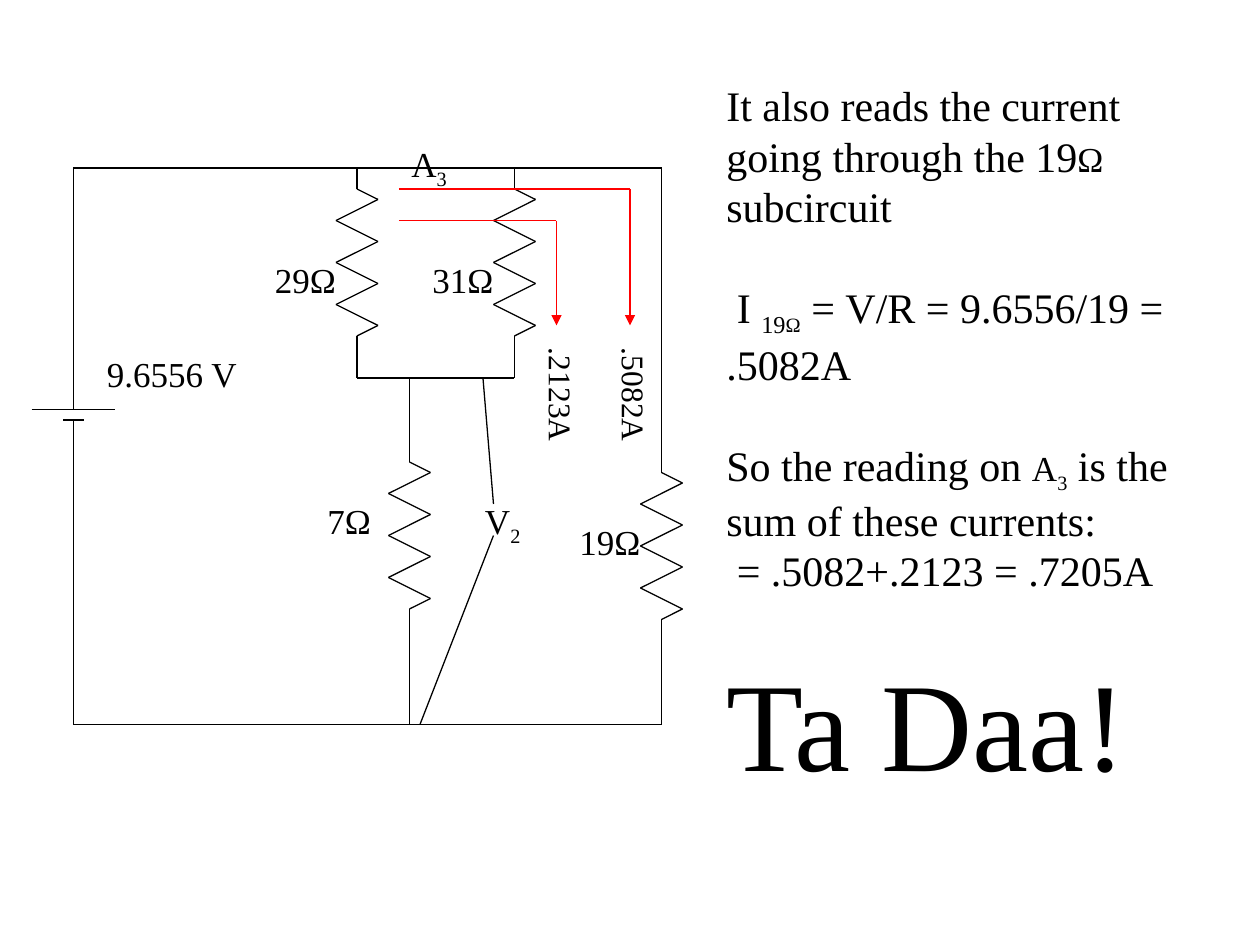
from itertools import pairwise

from lxml.etree import SubElement
from pptx import Presentation
from pptx.dml.color import RGBColor
from pptx.enum.shapes import MSO_CONNECTOR
from pptx.enum.text import MSO_AUTO_SIZE, PP_ALIGN
from pptx.oxml.ns import qn
from pptx.util import Cm, Pt

BLACK = RGBColor(0, 0, 0)
RED = RGBColor(255, 0, 0)
FONT = "Times New Roman"
GRID = 2.54 / 12  # the circuit lies on a grid of twelve steps to the inch


def grid(n):
    return Cm(n * GRID)


class CircuitSlide:
    def __init__(self, prs):
        self.s = prs.slides.add_slide(prs.slide_layouts[6])

    def wire(self, *points, color=BLACK, arrow=False):
        """Join the points by straight lines, with an arrowhead on the last if asked."""
        for start, end in pairwise(points):
            line = self.s.shapes.add_connector(
                MSO_CONNECTOR.STRAIGHT, *map(grid, start + end))
            line.line.color.rgb = color
            line.line.width = Pt(0.75)
            SubElement(line._element.spPr, qn("a:effectLst"))
        if arrow:
            SubElement(line.line._get_or_add_ln(), qn("a:tailEnd"), type="triangle")

    def resistor(self, x, top):
        """Zigzag, 14 steps high, centred on x."""
        turns = [(x + (-2 if i % 2 else 2), top + 1 + 2 * i) for i in range(7)]
        self.wire((x, top), *turns, (x, top + 14))

    def text(self, box, paragraphs, size=20, wrap=False, align=None, rotation=0):
        """A paragraph is (size, space before, runs); a run is (text, size, subscript)."""
        sp = self.s.shapes.add_textbox(*map(grid, box))
        sp.rotation = rotation
        tf = sp.text_frame
        tf.word_wrap = wrap
        tf.auto_size = MSO_AUTO_SIZE.SHAPE_TO_FIT_TEXT
        for i, (p_size, before, runs) in enumerate(paragraphs):
            p = tf.paragraphs[0] if i == 0 else tf.add_paragraph()
            p.alignment = align
            p.space_before = Pt(before)
            p.font.name = FONT
            p.font.color.rgb = BLACK
            p.font.size = Pt(p_size or size)
            for words, r_size, subscript in runs:
                r = p.add_run()
                r.text = words
                if r_size:
                    r.font.size = Pt(r_size)
                if subscript:
                    r._r.get_or_add_rPr().set("baseline", "-25000")

    def label(self, x, y, width, words, subscript="", size=20, height=5.16, **style):
        runs = [(words, None, False)]
        if subscript:
            runs.append((subscript, None, True))
        self.text((x, y, width, height), [(size, 0, runs)], **style)


def main():
    prs = Presentation()
    prs.slide_width, prs.slide_height = Cm(25.4), Cm(19.05)
    c = CircuitSlide(prs)

    # Outer loop and battery
    c.wire((7, 39), (7, 16), (63, 16), (63, 45))
    c.wire((7, 40), (7, 69), (63, 69), (63, 59))
    c.wire((3, 39), (11, 39))
    c.wire((6, 40), (8, 40))

    # Parallel pair and the resistor below it
    for x in (34, 49):
        c.wire((x, 16), (x, 18))
        c.wire((x, 32), (x, 36))
    c.wire((34, 36), (49, 36))
    c.wire((39, 36), (39, 44))
    c.wire((39, 58), (39, 69))
    for x, top in ((34, 18), (49, 18), (39, 44), (63, 45)):
        c.resistor(x, top)

    # Voltmeter leads
    c.wire((46, 36), (47, 48))
    c.wire((47, 51), (40, 69))

    # Component labels
    c.label(25, 24, 8.3, "29Ω")
    c.label(40, 24, 8.3, "31Ω")
    c.label(30, 47, 6.6, "7Ω")
    c.label(54, 49, 8.3, "19Ω")
    c.label(38, 13, 5.9, "A", "3")
    c.label(45, 47, 5.9, "V", "2")
    c.label(9, 33, 14.9, "9.6556 V")

    # Branch currents
    for x, y, label_x, current in ((53, 21, 47.8, ".2123A"), (60, 18, 54.75, ".5082A")):
        c.wire((38, y), (x, y), color=RED)
        c.wire((x, y), (x, 31), color=RED, arrow=True)
        c.label(label_x, 35.2, 11.3, current, size=18, height=4.8,
                align=PP_ALIGN.CENTER, rotation=90)

    # Explanation
    gap = 28.8
    c.text((68, 7, 47, 68.3), [
        (24, 0, [("It also reads the current going through the 19", None, False),
                 ("Ω", 20, False), (" subcircuit", None, False)]),
        (24, gap, [(" I ", None, False), ("19", None, True), ("Ω", 20, True),
                   (" = V/R = 9.6556/19 =", None, False)]),
        (24, 0, [(".5082A", None, False)]),
        (24, gap, [("So the reading on ", None, False), ("A", 20, False),
                   ("3", 20, True), (" is the sum of these currents:", None, False)]),
        (24, 0, [(" = .5082+.2123 = .7205A", None, False)]),
        (72, gap, [("Ta Daa!", None, False)]),
    ], wrap=True)

    prs.save("out.pptx")


if __name__ == "__main__":
    main()
